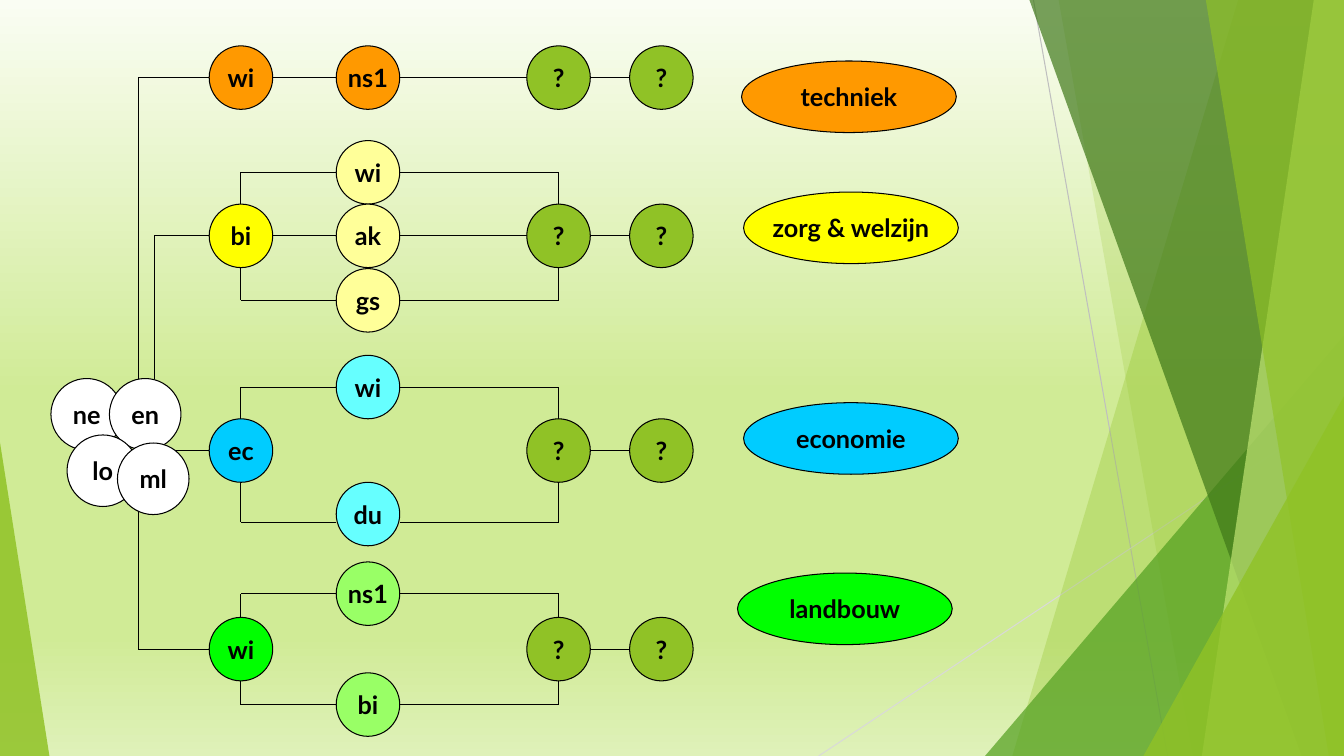
"""Build a slide that maps core subjects to four study sectors."""
from lxml.etree import SubElement as Sub
from pptx import Presentation
from pptx.dml.color import RGBColor as RGB
from pptx.enum.shapes import MSO_CONNECTOR as LINK, MSO_SHAPE as SHAPE
from pptx.enum.text import MSO_ANCHOR as ANCHOR, PP_ALIGN as ALIGN
from pptx.oxml.ns import qn
from pptx.util import Inches, Pt

WIDE, HIGH = 13.33, 7.5
FONT = "Lato"
BLACK, WHITE = RGB(0, 0, 0), RGB(255, 255, 255)
ORANGE, YELLOW, CREAM = RGB(255, 153, 0), RGB(255, 255, 0), RGB(255, 255, 153)
BLUE, AQUA = RGB(0, 204, 255), RGB(102, 255, 255)
LIME, MINT = RGB(0, 255, 0), RGB(153, 255, 102)
LEAF, GRASS = RGB(0x90, 0xC2, 0x26), RGB(0x54, 0xA0, 0x21)
MOSS, PALE = RGB(0x3F, 0x78, 0x19), RGB(0xC0, 0xE4, 0x74)
GREY, MIST = RGB(0xBF, 0xBF, 0xBF), RGB(0xD9, 0xD9, 0xD9)

SKY = [
    (0, RGB(0xFA, 0xFD, 0xF3)),
    (52, RGB(0xD0, 0xEB, 0x96)),
    (84, RGB(0xD0, 0xEB, 0x96)),
    (100, RGB(0xDF, 0xF1, 0xB9)),
]
RAYS = [(10.25, 0, 11.58, HIGH, GREY), (WIDE, 4.03, 8.12, HIGH, MIST)]
FACETS = [
    ("wedge", (12.28, 10.04), LEAF, 30),
    ("wedge", (10.5, 11.83), LEAF, 20),
    ("peak", (9.77, 3.33, 3.56, 1), GRASS, 72),
    ("wedge", (10.21, 12.91), MOSS, 70),
    ("wedge", (13.03, 11.92), PALE, 70),
    ("wedge", (11.96, 13.18), LEAF, 65),
    ("peak", (11.34, 3.93, 1.99, 1), LEAF, 80),
    ("peak", (0, 4.39, 0.49, 0), LEAF, 85),
]

DOT, CORE, OVAL = 0.63, 0.71, 2.13
FIRST, PICK, NEXT, LAST = 2.39, 3.65, 5.54, 6.56
CORES = [("ne", 0.86, 4.11), ("en", 1.44, 4.11), ("lo", 1.02, 4.67), ("ml", 1.52, 4.75)]
SECTORS = [
    {"name": "techniek", "oval": (8.42, 0.96), "row": 0.77, "rail": (1.37, 3.76),
     "start": "wi", "fill": ORANGE, "tint": ORANGE, "picks": [("ns1", 0.77, 0.77)]},
    {"name": "zorg & welzijn", "oval": (8.44, 2.26), "row": 2.34, "rail": (1.53, 3.76),
     "start": "bi", "fill": YELLOW, "tint": CREAM,
     "picks": [("wi", 1.71, 1.71), ("ak", 2.34, 2.34), ("gs", 2.98, 2.98)]},
    {"name": "economie", "oval": (8.44, 4.35), "row": 4.47, "rail": (1.53, 4.47),
     "start": "ec", "fill": BLUE, "tint": AQUA,
     "picks": [("wi", 3.84, 3.84), ("du", 5.1, 5.18)]},
    {"name": "landbouw", "oval": (8.38, 6.04), "row": 6.44, "rail": (1.37, 4.47),
     "start": "wi", "fill": LIME, "tint": MINT,
     "picks": [("ns1", 5.89, 5.89), ("bi", 6.99, 6.99)]},
]

deck = Presentation()
deck.slide_width, deck.slide_height = Inches(WIDE), Inches(HIGH)
slide = deck.slides.add_slide(deck.slide_layouts[6])
shapes = slide.shapes


def paint_sky():
    fill = slide.background.fill
    fill.gradient()
    fill.gradient_angle = 270
    stops = slide.element.find(".//" + qn("a:gsLst"))
    for stop in list(stops):
        stops.remove(stop)
    for share, tone in SKY:
        stop = Sub(stops, qn("a:gs"), pos=str(share * 1000))
        Sub(stop, qn("a:srgbClr"), val=str(tone))


def line(x1, y1, x2, y2, tone=BLACK):
    if (x1, y1) == (x2, y2):
        return
    link = shapes.add_connector(LINK.STRAIGHT, *map(Inches, (x1, y1, x2, y2)))
    link.line.color.rgb = tone
    link.line.width = Pt(0.75)
    Sub(link.element.spPr, qn("a:effectLst"))


def trace(*points):
    for start, end in zip(points, points[1:]):
        line(*start, *end)


def facet(kind, place, tone, cover):
    if kind == "wedge":
        top, foot = place
        points = [(Inches(x), Inches(y)) for x, y in
                  ((top, 0), (WIDE, 0), (WIDE, HIGH), (foot, HIGH))]
        pen = shapes.build_freeform(*points[0])
        pen.add_line_segments(points[1:])
        form = pen.convert_to_shape()
    else:
        left, top, width, tip = place
        form = shapes.add_shape(SHAPE.ISOSCELES_TRIANGLE,
                                *map(Inches, (left, top, width, HIGH - top)))
        form.adjustments[0] = tip
    form.shadow.inherit = False
    form.line.fill.background()
    form.fill.solid()
    form.fill.fore_color.rgb = tone
    Sub(form.element.find(".//" + qn("a:srgbClr")), qn("a:alpha"), val=str(cover * 1000))


def bubble(text, x, y, tone, width=DOT, height=DOT):
    form = shapes.add_shape(SHAPE.OVAL, *map(Inches, (x - width / 2, y - height / 2, width, height)))
    form.shadow.inherit = False
    form.fill.solid()
    form.fill.fore_color.rgb = tone
    form.line.color.rgb = BLACK
    form.line.width = Pt(0.75)
    frame = form.text_frame
    frame.word_wrap = False
    frame.vertical_anchor = ANCHOR.MIDDLE
    para = frame.paragraphs[0]
    para.text = text
    para.alignment = ALIGN.CENTER
    font = para.font
    font.name, font.size, font.bold = FONT, Pt(18), True
    font.color.rgb = BLACK


def sector(item):
    row, half = item["row"], DOT / 2
    rail, base = item["rail"]
    trace((rail, base), (rail, row), (FIRST - half, row))
    line(NEXT + half, row, LAST - half, row)
    for text, mid, level in item["picks"]:
        if level == row:
            line(FIRST + half, row, PICK - half, row)
            line(PICK + half, row, NEXT - half, row)
        else:
            edge = row + (half if level > row else -half)
            trace((FIRST, edge), (FIRST, level), (PICK - half, level))
            trace((PICK + half, level), (NEXT, level), (NEXT, edge))
        bubble(text, PICK, mid, item["tint"])
    bubble(item["start"], FIRST, row, item["fill"])
    for x in (NEXT, LAST):
        bubble("?", x, row, LEAF)
    bubble(item["name"], *item["oval"], item["fill"], OVAL, CORE)


paint_sky()
for ray in RAYS:
    line(*ray)
for part in FACETS:
    facet(*part)
for item in SECTORS:
    sector(item)
for text, x, y in CORES:
    bubble(text, x, y, WHITE, CORE, CORE)
deck.save("out.pptx")
